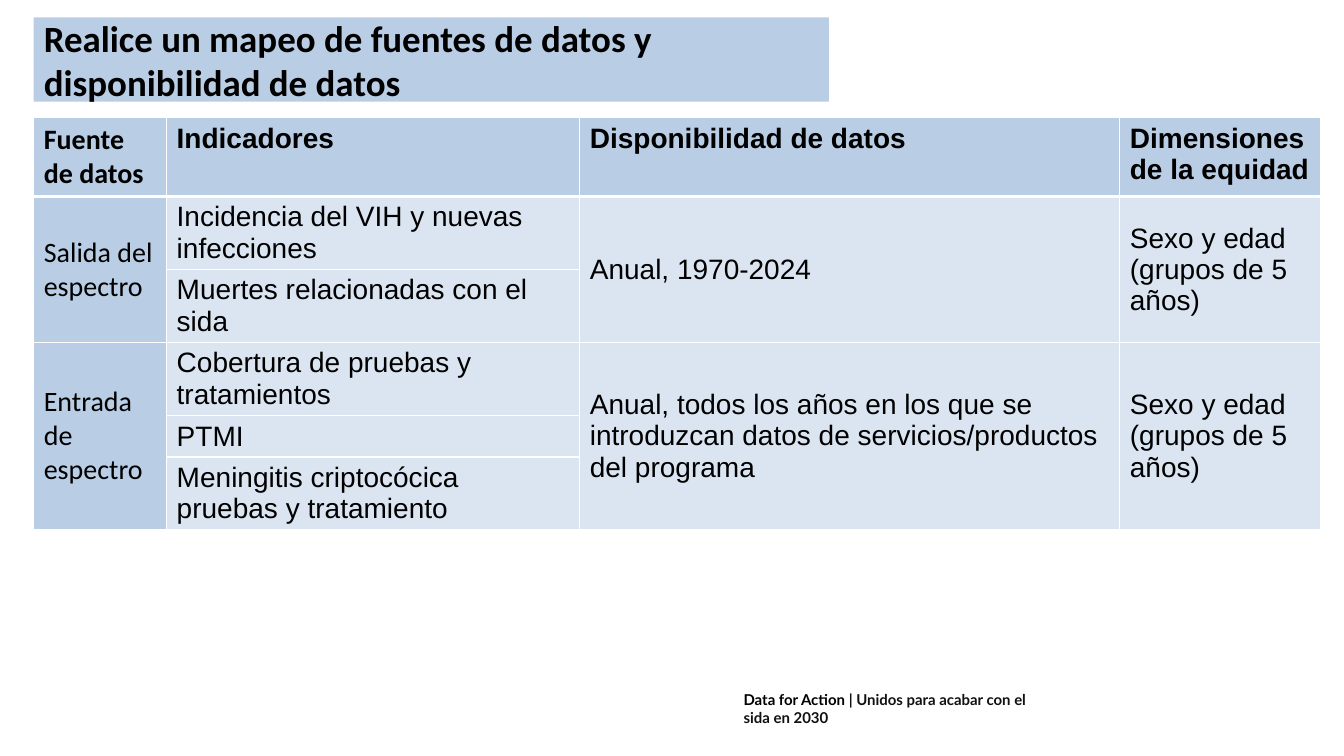
import pptx
import pptx.util
import pptx.dml.color
import pptx.enum.text
import pptx.oxml.ns
import lxml.etree

Cm = pptx.util.Cm
Pt = pptx.util.Pt
RGBColor = pptx.dml.color.RGBColor
MIDDLE = pptx.enum.text.MSO_ANCHOR.MIDDLE
TOP = pptx.enum.text.MSO_ANCHOR.TOP
qn = pptx.oxml.ns.qn

BLUE = RGBColor(0xB9, 0xCD, 0xE5)
BLACK = RGBColor(0x00, 0x00, 0x00)
DARK = RGBColor(0x11, 0x11, 0x11)
WHITE = RGBColor(0xFF, 0xFF, 0xFF)


def add_run(paragraph, text, font_name, size, color, bold):
    run = paragraph.add_run()
    run.text = text
    run.font.name = font_name
    run.font.size = Pt(size)
    run.font.color.rgb = color
    run.font.bold = bold


def add_borders(cell, bottom_width):
    properties = cell._tc.get_or_add_tcPr()
    widths = {"a:lnL": 1, "a:lnR": 1, "a:lnT": 1, "a:lnB": bottom_width}
    for tag, width in widths.items():
        line = lxml.etree.SubElement(properties, qn(tag), w=str(Pt(width)))
        line_fill = lxml.etree.SubElement(line, qn("a:solidFill"))
        lxml.etree.SubElement(line_fill, qn("a:srgbClr"), val=str(WHITE))


presentation = pptx.Presentation()
presentation.slide_width = Cm(33.87)
presentation.slide_height = Cm(19.05)
slide = presentation.slides.add_slide(presentation.slide_layouts[5])

# Title
title = slide.shapes.title
title.left, title.top, title.width, title.height = Cm(0.85), Cm(0.44), Cm(20.04), Cm(2.12)
title.fill.solid()
title.fill.fore_color.rgb = BLUE
title.text_frame.word_wrap = True
title.text_frame.auto_size = pptx.enum.text.MSO_AUTO_SIZE.NONE
title.text_frame.vertical_anchor = MIDDLE
paragraph = title.text_frame.paragraphs[0]
paragraph.alignment = pptx.enum.text.PP_ALIGN.LEFT
add_run(paragraph, "Realice un mapeo de fuentes de datos y disponibilidad de datos",
        "Calibri", 26.4, BLACK, True)

# Table of data sources; None continues the cell above
rows = [
    ["Fuente de datos", "Indicadores", "Disponibilidad de datos", "Dimensiones de la equidad"],
    ["Salida del espectro", "Incidencia del VIH y nuevas infecciones",
     "Anual, 1970-2024", "Sexo y edad (grupos de 5 años)"],
    [None, "Muertes relacionadas con el sida", None, None],
    ["Entrada de espectro", "Cobertura de pruebas y tratamientos",
     "Anual, todos los años en los que se introduzcan datos de servicios/productos del programa",
     "Sexo y edad (grupos de 5 años)"],
    [None, "PTMI", None, None],
    [None, "Meningitis criptocócica \npruebas y tratamiento", None, None],
]
column_widths = [3.35, 10.41, 13.61, 5.05]
row_heights = [1.95, 1.84, 1.84, 1.84, 1.04, 1.81]
table = slide.shapes.add_table(len(rows), len(column_widths), Cm(0.85), Cm(2.97),
                               Cm(sum(column_widths)), Cm(sum(row_heights))).table
table.horz_banding = False
for column, width in zip(table.columns, column_widths):
    column.width = Cm(width)
for row, height in zip(table.rows, row_heights):
    row.height = Cm(height)

for row_index, texts in enumerate(rows):
    is_header = row_index == 0
    for column_index, text in enumerate(texts):
        cell = table.cell(row_index, column_index)
        is_source = column_index == 0
        add_borders(cell, 3 if is_header else 1)
        cell.fill.solid()
        cell.fill.fore_color.rgb = BLUE
        if not (is_header or is_source):
            color = cell._tc.tcPr.find(qn("a:solidFill")).find(qn("a:srgbClr"))
            lxml.etree.SubElement(color, qn("a:alpha"), val="50000")
        if text is None:
            continue
        cell.vertical_anchor = TOP if is_header or column_index == 1 else MIDDLE
        paragraph = cell.text_frame.paragraphs[0]
        for line_index, line_text in enumerate(text.split("\n")):
            if line_index:
                paragraph.add_line_break()
            add_run(paragraph, line_text, "Calibri" if is_source else "Arial",
                    20, BLACK, is_header)

# Merge the cells shared by each source group
for first_row, last_row in [(1, 2), (3, 5)]:
    for column_index in (0, 2, 3):
        table.cell(first_row, column_index).merge(table.cell(last_row, column_index))

# Footer
footer = slide.shapes.add_textbox(Cm(18.49), Cm(17.27), Cm(7.77), Cm(0.71))
footer.text_frame.word_wrap = True
footer.text_frame.auto_size = pptx.enum.text.MSO_AUTO_SIZE.SHAPE_TO_FIT_TEXT
paragraph = footer.text_frame.paragraphs[0]
add_run(paragraph, "Data for Action", "Lato", 10.7, BLACK, True)
add_run(paragraph, " | Unidos para acabar con el sida en 2030", "Lato", 10.7, DARK, True)

presentation.save("out.pptx")
